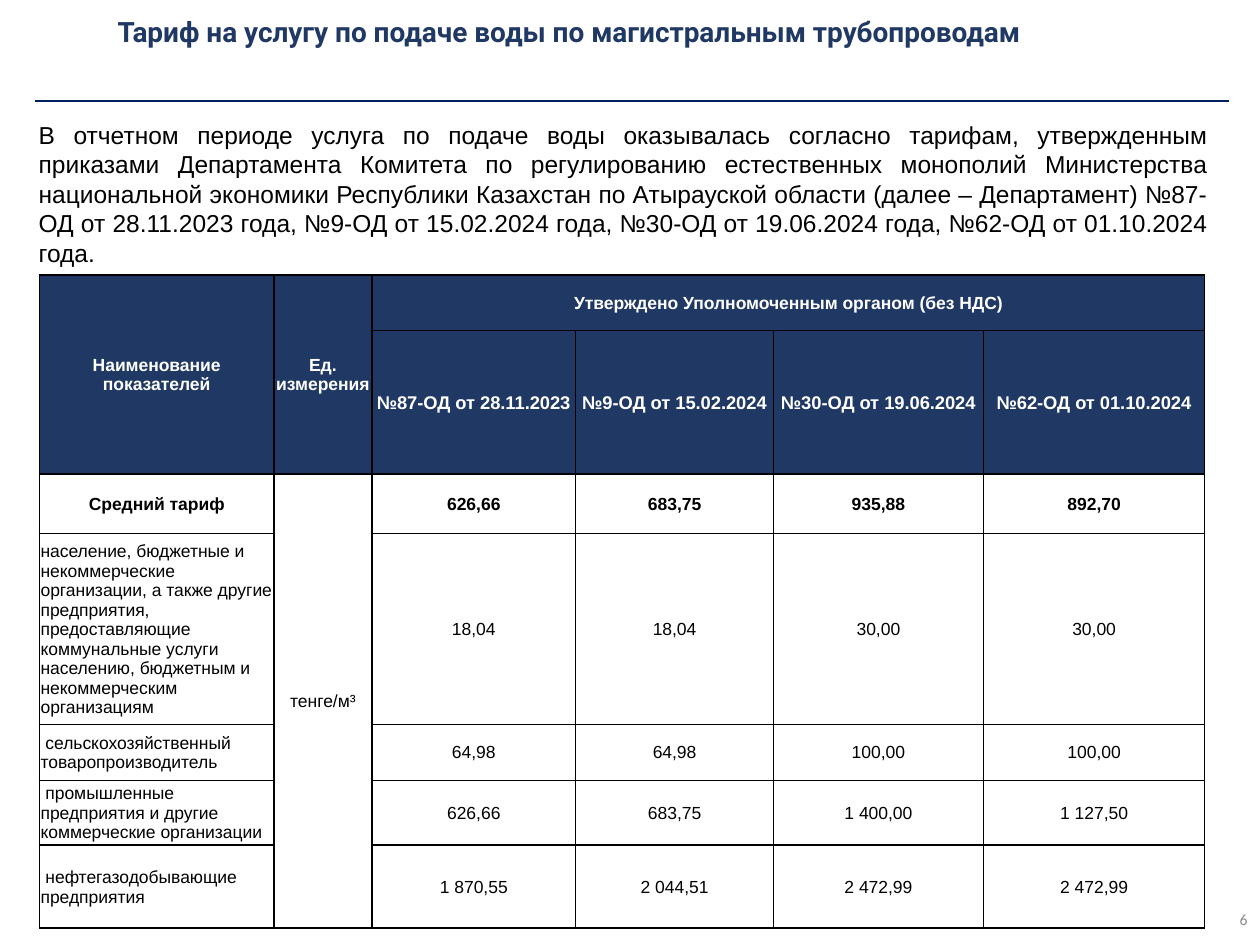
from lxml import etree
from pptx import Presentation
from pptx.dml.color import RGBColor
from pptx.enum import shapes, text
from pptx.oxml import ns
from pptx.util import Pt

NAVY = RGBColor(0x20, 0x38, 0x64)
RULE_BLUE = RGBColor(0x00, 0x20, 0x60)
GREY = RGBColor(0x8C, 0x8C, 0x8C)
BLACK = RGBColor(0, 0, 0)
WHITE = RGBColor(255, 255, 255)


def write_text(frame, wording, color, alignment, **font_format):
    paragraph = frame.paragraphs[0]
    paragraph.text = wording
    paragraph.alignment = alignment
    for name, value in font_format.items():
        setattr(paragraph.font, name, value)
    paragraph.font.color.rgb = color


def add_borders(cell):
    properties = cell._tc.get_or_add_tcPr()
    for side in ("lnL", "lnR", "lnT", "lnB"):
        line = etree.SubElement(properties, ns.qn(f"a:{side}"), w=str(Pt(1)))
        fill = etree.SubElement(line, ns.qn("a:solidFill"))
        etree.SubElement(fill, ns.qn("a:srgbClr"), val=str(BLACK))


presentation = Presentation()
presentation.slide_width = Pt(720)
presentation.slide_height = Pt(540)
slide = presentation.slides.add_slide(presentation.slide_layouts[5])

title = slide.shapes.title
placement = {"left": Pt(60), "top": Pt(3), "width": Pt(643), "height": Pt(30)}
for name, value in placement.items():
    setattr(title, name, value)
title.text_frame.vertical_anchor = text.MSO_ANCHOR.MIDDLE
title.text_frame.auto_size = text.MSO_AUTO_SIZE.NONE
write_text(title.text_frame, "Тариф на услугу по подаче воды по магистральным трубопроводам",
           NAVY, text.PP_ALIGN.LEFT, name="Roboto", size=Pt(16), bold=True)

rule = slide.shapes.add_connector(
    shapes.MSO_CONNECTOR.STRAIGHT, Pt(20), Pt(57.6), Pt(702), Pt(57.6))
rule.line.color.rgb = RULE_BLUE
rule.line.width = Pt(1)
etree.SubElement(rule._element.spPr, ns.qn("a:effectLst"))

introduction = slide.shapes.add_textbox(Pt(15), Pt(65), Pt(682.5), Pt(92)).text_frame
introduction.word_wrap = True
introduction.auto_size = text.MSO_AUTO_SIZE.SHAPE_TO_FIT_TEXT
write_text(
    introduction,
    "В отчетном периоде услуга по подаче воды оказывалась согласно тарифам, утвержденным "
    "приказами Департамента Комитета по регулированию естественных монополий Министерства "
    "национальной экономики Республики Казахстан по Атырауской области (далее – Департамент) "
    "№87-ОД от 28.11.2023 года, №9-ОД от 15.02.2024 года, №30-ОД от 19.06.2024 года, "
    "№62-ОД от 01.10.2024 года.",
    BLACK, text.PP_ALIGN.JUSTIFY, name="Arial", size=Pt(14))

tariff_rows = [
    ["Наименование показателей", "Ед. измерения",
     "Утверждено Уполномоченным органом (без НДС)", "", "", ""],
    ["", "", "№87-ОД от 28.11.2023", "№9-ОД от 15.02.2024",
     "№30-ОД от 19.06.2024", "№62-ОД от 01.10.2024"],
    ["Средний тариф", "тенге/м³", "626,66", "683,75", "935,88", "892,70"],
    ["население, бюджетные и некоммерческие организации, а также другие предприятия, "
     "предоставляющие коммунальные услуги населению, бюджетным и некоммерческим организациям",
     "", "18,04", "18,04", "30,00", "30,00"],
    [" сельскохозяйственный товаропроизводитель", "", "64,98", "64,98", "100,00", "100,00"],
    [" промышленные предприятия и другие коммерческие организации",
     "", "626,66", "683,75", "1 400,00", "1 127,50"],
    [" нефтегазодобывающие предприятия", "", "1 870,55", "2 044,51", "2 472,99", "2 472,99"],
]
column_widths = [134, 56, 116.5, 113, 120, 126.5]
row_heights = [32, 82, 34, 109, 32, 37, 47.5]

table = slide.shapes.add_table(
    len(row_heights), len(column_widths), Pt(22.5), Pt(157),
    Pt(sum(column_widths)), Pt(sum(row_heights))).table
table.first_row = False
table.horz_banding = False
for column, width in zip(table.columns, column_widths):
    column.width = Pt(width)
for row, height in zip(table.rows, row_heights):
    row.height = Pt(height)

cell_format = {"margin_left": Pt(0.7), "margin_right": Pt(0.7), "margin_top": Pt(0.7),
               "margin_bottom": Pt(0), "vertical_anchor": text.MSO_ANCHOR.MIDDLE}
for row_index, row_values in enumerate(tariff_rows):
    for column_index, wording in enumerate(row_values):
        cell = table.cell(row_index, column_index)
        for name, value in cell_format.items():
            setattr(cell, name, value)
        add_borders(cell)
        is_header = row_index < 2
        if is_header:
            cell.fill.solid()
            cell.fill.fore_color.rgb = NAVY
        else:
            cell.fill.background()
        is_category = row_index > 2 and column_index == 0
        write_text(
            cell.text_frame, wording, WHITE if is_header else BLACK,
            text.PP_ALIGN.LEFT if is_category else text.PP_ALIGN.CENTER,
            name="Arial", size=Pt(10.5 if row_index == 1 else 10),
            bold=is_header or (row_index == 2 and column_index != 1))

for first, last in [((0, 0), (1, 0)), ((0, 1), (1, 1)), ((0, 2), (0, 5)), ((2, 1), (6, 1))]:
    table.cell(*first).merge(table.cell(*last))

page_number = slide.shapes.add_textbox(Pt(558), Pt(511), Pt(162), Pt(29)).text_frame
page_number.word_wrap = True
page_number.vertical_anchor = text.MSO_ANCHOR.MIDDLE
write_text(page_number, "6", GREY, text.PP_ALIGN.RIGHT, name="Calibri", size=Pt(9))

presentation.save("out.pptx")
